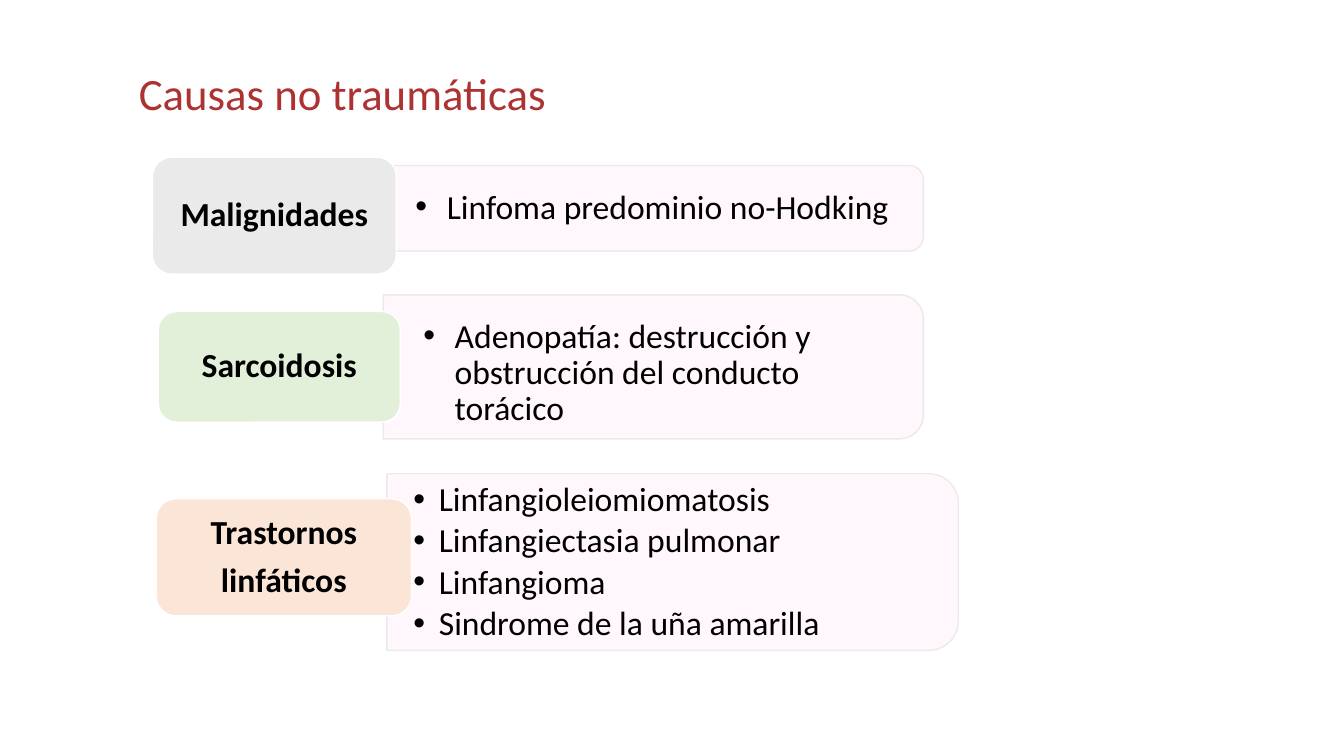
from lxml.etree import SubElement
from pptx import Presentation
from pptx.dml.color import RGBColor
from pptx.enum.shapes import MSO_SHAPE
from pptx.enum.text import MSO_ANCHOR, PP_ALIGN
from pptx.oxml.ns import qn
from pptx.util import Cm, Pt

COLORS = {
    "title": "AD3333",
    "text": "000000",
    "panel": "FFF7FC",
    "panel_line": "EAEAEA",
    "label_line": "FFFFFF",
    "gray": "EAEAEA",
    "green": "E2F0D9",
    "orange": "FBE5D6",
}

# Boxes are left, top, width and height in centimetres.
CAUSES = [
    {
        "label": ["Malignidades"],
        "color": "gray",
        "label_box": (3.84, 3.96, 6.15, 2.95),
        "panel_box": (9.78, 4.17, 13.49, 2.16),
        "text_box": (9.78, 4.27, 13.39, 1.96),
        "items": ["Linfoma predominio no-Hodking"],
        "indent": 0.79,
    },
    {
        "label": ["Sarcoidosis"],
        "color": "green",
        "label_box": (3.99, 7.85, 6.1, 2.79),
        "panel_box": (9.66, 7.43, 13.61, 3.63),
        "text_box": (9.98, 7.8, 13.34, 3.23),
        "items": ["Adenopatía: destrucción y obstrucción del conducto torácico"],
        "indent": 0.79,
    },
    {
        "label": ["Trastornos", "linfáticos"],
        "color": "orange",
        "label_box": (3.94, 12.57, 6.43, 2.95),
        "panel_box": (9.75, 11.94, 14.4, 4.45),
        "text_box": (9.73, 12.17, 14.2, 4.01),
        "items": [
            "Linfangioleiomiomatosis",
            "Linfangiectasia pulmonar",
            "Linfangioma",
            "Sindrome de la uña amarilla",
        ],
        "indent": 0.64,
    },
]


class CauseSlide:
    font_name = "Calibri"
    text_size = 24
    title_size = 32

    def __init__(self, presentation):
        self.slide = presentation.slides.add_slide(presentation.slide_layouts[6])

    def add_shape(self, kind, box, fill, line):
        shape = self.slide.shapes.add_shape(kind, *map(Cm, box))
        shape.shadow.inherit = False
        shape.fill.solid()
        shape.fill.fore_color.rgb = RGBColor.from_string(COLORS[fill])
        shape.line.color.rgb = RGBColor.from_string(COLORS[line])
        shape.line.width = Pt(1)
        return shape

    def add_textbox(self, box):
        text_frame = self.slide.shapes.add_textbox(*map(Cm, box)).text_frame
        text_frame.word_wrap = True
        return text_frame

    def set_lines(self, text_frame, lines, size, color="text", bold=False,
                  align=PP_ALIGN.LEFT, space_after=0, indent=None):
        """Fill the frame with one paragraph per line, bulleted if indented."""
        text_frame.text = "\n".join(lines)
        for paragraph in text_frame.paragraphs:
            if indent:
                self.add_bullet(paragraph, indent)
            paragraph.alignment = align
            paragraph.line_spacing = 0.9
            paragraph.space_after = Pt(space_after)
            font = paragraph.runs[0].font
            font.name = self.font_name
            font.size = Pt(size)
            font.bold = bold
            font.color.rgb = RGBColor.from_string(COLORS[color])

    def add_bullet(self, paragraph, indent):
        properties = paragraph._p.get_or_add_pPr()
        properties.set("marL", str(Cm(indent)))
        properties.set("indent", str(-Cm(indent)))
        SubElement(properties, qn("a:buFont"), typeface="Arial")
        SubElement(properties, qn("a:buChar"), char="•")

    def add_title(self, text, box):
        self.set_lines(self.add_textbox(box), [text], self.title_size, "title")

    def add_panel(self, box):
        """Draw a panel rounded on the right: a quarter turn of a top-rounded one."""
        left, top, width, height = box
        shift = (width - height) / 2
        turned_box = (left + shift, top - shift, height, width)
        panel = self.add_shape(MSO_SHAPE.ROUND_2_SAME_RECTANGLE, turned_box,
                               "panel", "panel_line")
        panel.rotation = 90

    def add_items(self, items, box, indent):
        text_frame = self.add_textbox(box)
        text_frame.vertical_anchor = MSO_ANCHOR.MIDDLE
        text_frame.margin_left = text_frame.margin_right = Cm(0.69)
        text_frame.margin_top = text_frame.margin_bottom = Cm(0.36)
        self.set_lines(text_frame, items, self.text_size, space_after=3.6,
                       indent=indent)

    def add_label(self, lines, box, color):
        label = self.add_shape(MSO_SHAPE.ROUNDED_RECTANGLE, box, color, "label_line")
        label.text_frame.word_wrap = True
        label.text_frame.vertical_anchor = MSO_ANCHOR.MIDDLE
        self.set_lines(label.text_frame, lines, self.text_size, bold=True,
                       align=PP_ALIGN.CENTER, space_after=8.4)


def main():
    presentation = Presentation()
    presentation.slide_width = Cm(33.87)
    presentation.slide_height = Cm(19.05)
    slide = CauseSlide(presentation)
    slide.add_title("Causas no traumáticas", (3.25, 1.68, 29.21, 2.74))
    for cause in CAUSES:
        slide.add_panel(cause["panel_box"])
        slide.add_items(cause["items"], cause["text_box"], cause["indent"])
        slide.add_label(cause["label"], cause["label_box"], cause["color"])
    presentation.save("out.pptx")


if __name__ == "__main__":
    main()
